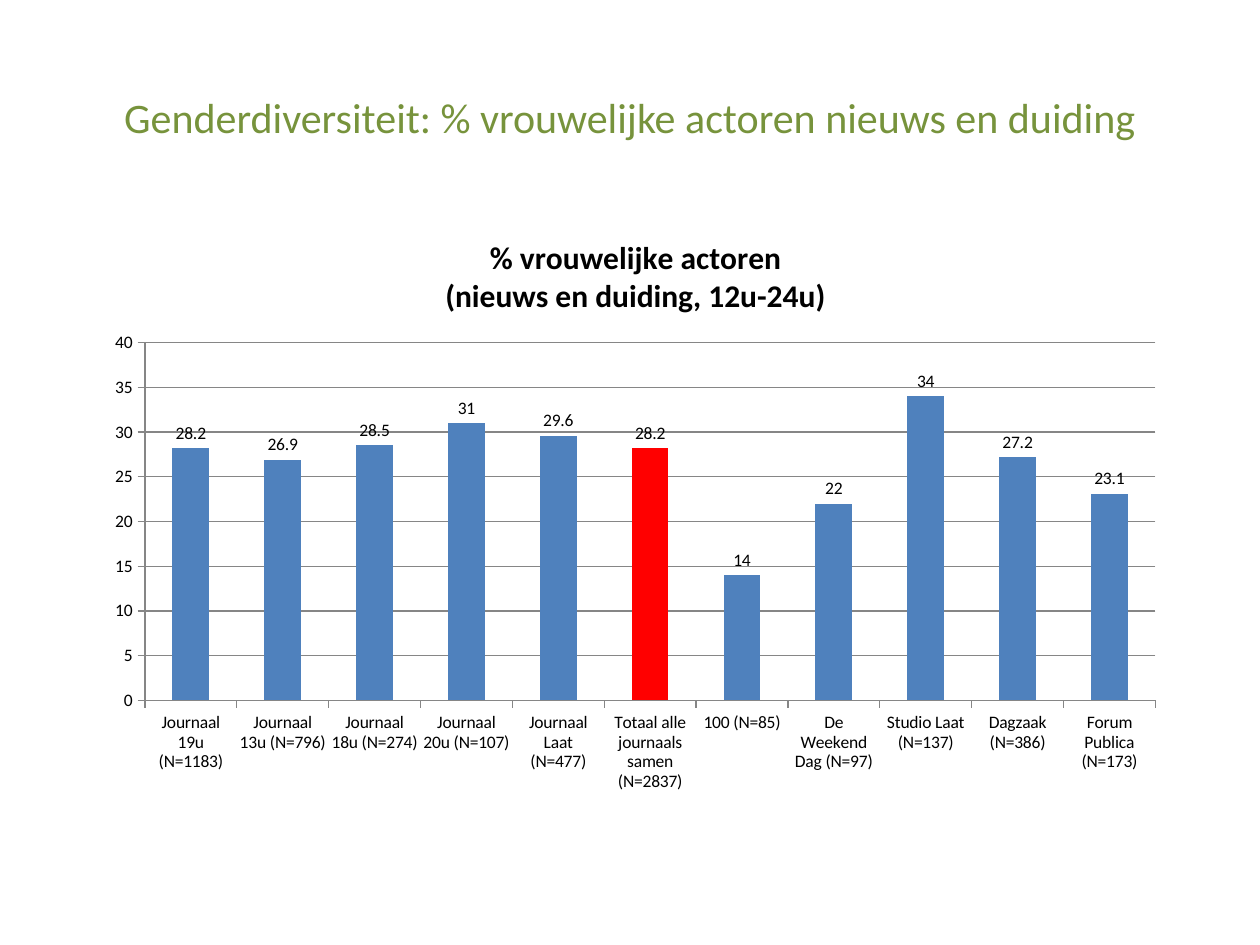
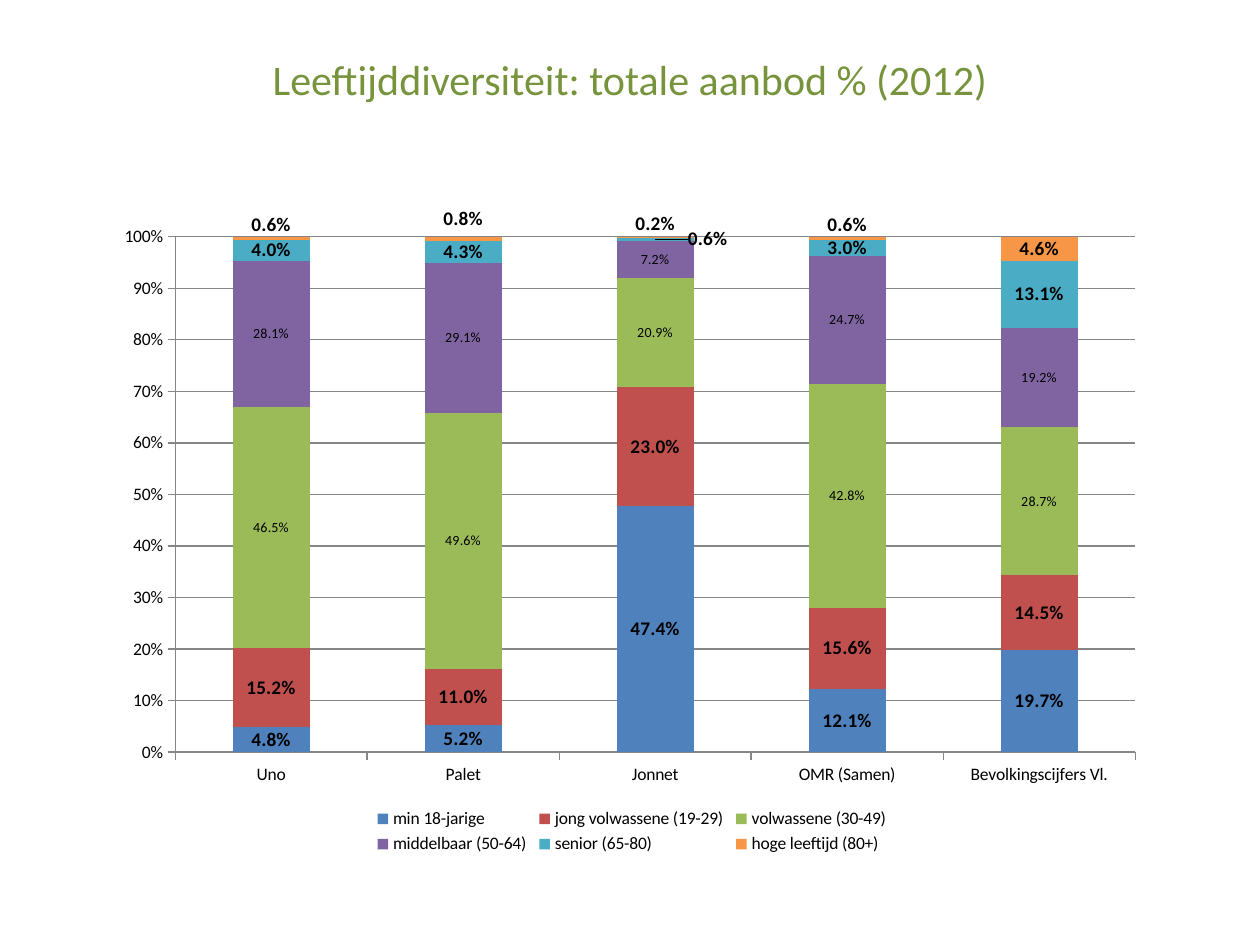
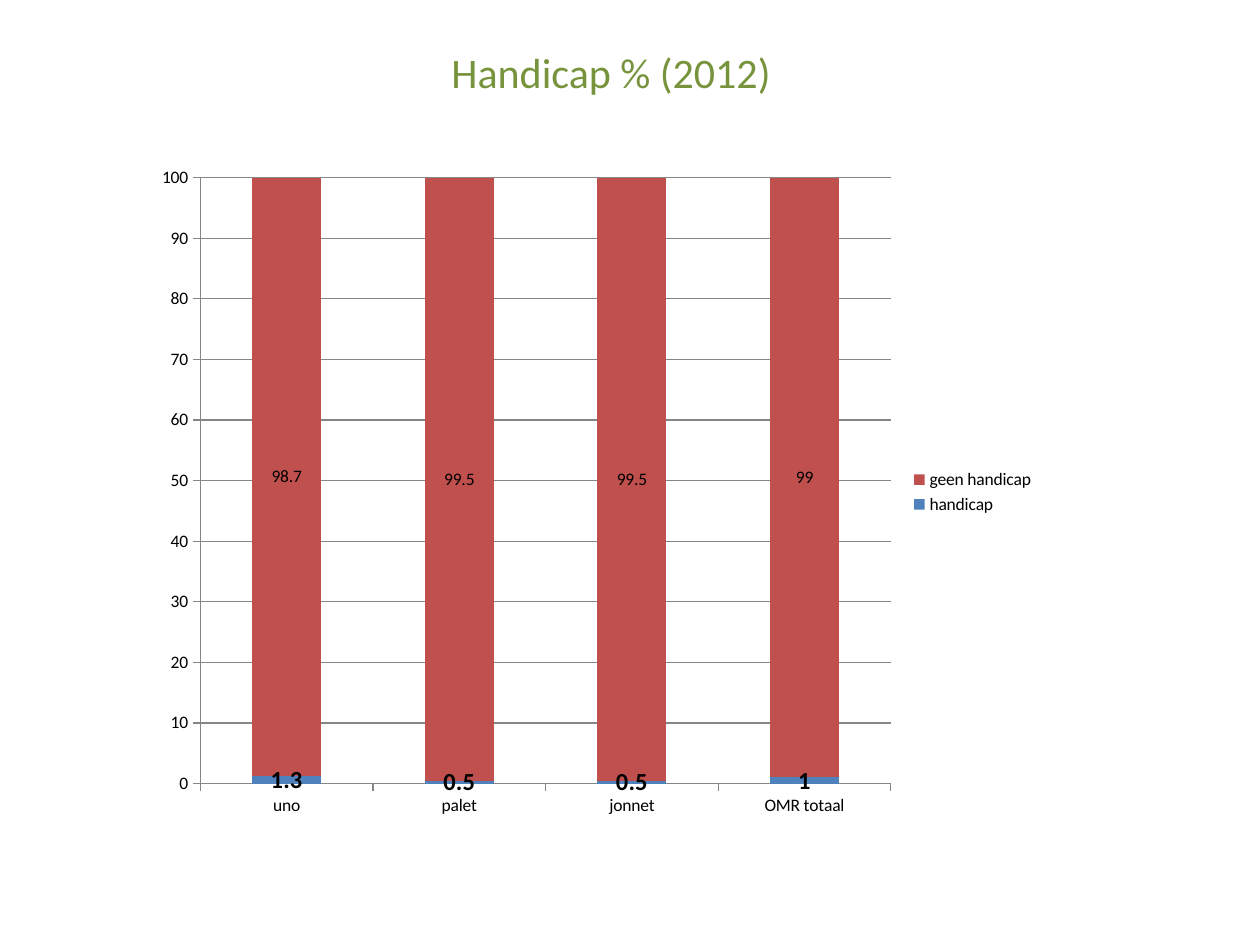
from pptx import Presentation
from pptx.chart.data import CategoryChartData
from pptx.dml.color import RGBColor
from pptx.enum.chart import XL_CHART_TYPE as ChartType
from pptx.enum.chart import XL_LABEL_POSITION as LabelPos
from pptx.enum.chart import XL_LEGEND_POSITION as LegendPos
from pptx.enum.chart import XL_TICK_MARK as TickMark
from pptx.enum.text import MSO_ANCHOR as Anchor
from pptx.enum.text import PP_ALIGN as Align
from pptx.oxml import parse_xml
from pptx.oxml.ns import nsdecls, qn
from pptx.util import Inches, Pt

FONT = "Calibri"
TITLE_GREEN = "77933C"
BLACK = "000000"
GRID_GRAY = "868686"
TOTAL_RED = "FF0000"
SERIES_COLORS = ["4F81BD", "C0504D", "9BBB59", "8064A2", "4BACC6", "F79646"]


def color(hex_value):
    return RGBColor.from_string(hex_value)


def style_font(font, size, bold=False, hex_value=BLACK):
    font.name = FONT
    font.size = Pt(size)
    font.bold = bold
    font.color.rgb = color(hex_value)


def add_title(slide, text, left, top, height):
    sp = slide.shapes.add_textbox(Inches(left), Inches(top), Inches(9), Inches(height))
    tf = sp.text_frame
    tf.word_wrap = True
    tf.vertical_anchor = Anchor.MIDDLE
    p = tf.paragraphs[0]
    p.alignment = Align.CENTER
    r = p.add_run()
    r.text = text
    style_font(r.font, 24, hex_value=TITLE_GREEN)


def manual_layout(modes, **values):
    tags = [f'<c:{tag} val="{val}"/>' for tag, val in modes.items()]
    tags += [f'<c:{tag} val="{val:.4f}"/>' for tag, val in values.items()]
    return parse_xml(f'<c:layout {nsdecls("c")}><c:manualLayout>{"".join(tags)}'
                     '</c:manualLayout></c:layout>')


def box_layout(frame, box, **modes):
    modes.update(xMode="edge", yMode="edge")
    left, top, width, height = box
    return manual_layout(
        modes,
        x=(Inches(left) - frame.left) / frame.width,
        y=(Inches(top) - frame.top) / frame.height,
        w=Inches(width) / frame.width,
        h=Inches(height) / frame.height)


def place_plot(frame, box):
    area = frame.chart.plots[0]._element.getparent()
    for old in area.findall(qn("c:layout")):
        area.remove(old)
    area.insert(0, box_layout(frame, box, layoutTarget="inner"))


def style_axes(chart, maximum, unit, number_format):
    axis = chart.value_axis
    axis.minimum_scale = 0
    axis.maximum_scale = maximum
    axis.major_unit = unit
    axis.has_major_gridlines = True
    axis.tick_labels.number_format = number_format
    axis.tick_labels.number_format_is_linked = False
    for line in (axis.major_gridlines.format.line, axis.format.line,
                 chart.category_axis.format.line):
        line.color.rgb = color(GRID_GRAY)
        line.width = Pt(0.75)
    for each in (axis, chart.category_axis):
        each.major_tick_mark = TickMark.OUTSIDE
        each.minor_tick_mark = TickMark.NONE


def add_column_chart(slide, kind, box, plot_box, cats, series, label_sizes,
                     maximum, unit, axis_format="General", label_format="General"):
    data = CategoryChartData(number_format=label_format)
    data.categories = cats
    for name, vals in series:
        data.add_series(name, vals)
    frame = slide.shapes.add_chart(kind, *map(Inches, box), data)
    chart = frame.chart
    style_font(chart.font, 10)
    chart.has_title = False
    chart.has_legend = False
    style_axes(chart, maximum, unit, axis_format)
    place_plot(frame, plot_box)
    plot = chart.plots[0]
    plot.gap_width = 150
    plot.vary_by_categories = False
    if kind != ChartType.COLUMN_CLUSTERED:
        plot.overlap = 100
    for ser, fill, size in zip(plot.series, SERIES_COLORS, label_sizes):
        ser.format.fill.solid()
        ser.format.fill.fore_color.rgb = color(fill)
        labels = ser.data_labels
        labels.show_value = True
        labels.number_format = label_format
        labels.number_format_is_linked = False
        style_font(labels.font, size, size > 10)
    return frame


def add_legend(chart, position):
    chart.has_legend = True
    chart.legend.position = position
    chart.legend.include_in_layout = False
    style_font(chart.legend.font, 10)


def add_chart_title(chart, lines):
    chart.has_title = True
    chart.chart_title.include_in_layout = False
    tf = chart.chart_title.text_frame
    for i, line in enumerate(lines):
        p = tf.add_paragraph() if i else tf.paragraphs[0]
        r = p.add_run()
        r.text = line
        style_font(r.font, 18, True)


def shift_label(ser, index, dx, dy):
    style_font(ser.points[index].data_label.font, 11, True)
    for idx in ser._element.xpath(f"c:dLbls/c:dLbl/c:idx[@val='{index}']"):
        idx.addnext(manual_layout({}, x=dx, y=dy))


def gender_slide(slide):
    add_title(slide, "Genderdiversiteit: % vrouwelijke actoren nieuws en duiding", 0.5, 0.3, 1.25)
    cats = ["Journaal 19u (N=1183)", "Journaal 13u (N=796)", "Journaal 18u (N=274)",
            "Journaal 20u (N=107)", "Journaal Laat (N=477)",
            "Totaal alle journaals samen (N=2837)", "100 (N=85)",
            "De Weekend Dag (N=97)", "Studio Laat (N=137)", "Dagzaak (N=386)",
            "Forum Publica (N=173)"]
    vals = [28.2, 26.9, 28.5, 31, 29.6, 28.2, 14, 22, 34, 27.2, 23.1]
    chart = add_column_chart(
        slide, ChartType.COLUMN_CLUSTERED, (0.75, 1.7, 8.59, 4.68), (1.15, 2.72, 8.02, 2.84),
        cats, [("% vrouwelijke actoren", vals)], [10], 40, 5).chart
    add_chart_title(chart, ["% vrouwelijke actoren", "(nieuws en duiding, 12u-24u)"])
    ser = chart.plots[0].series[0]
    ser.data_labels.position = LabelPos.OUTSIDE_END
    total_fill = ser.points[5].format.fill
    total_fill.solid()
    total_fill.fore_color.rgb = color(TOTAL_RED)


def age_slide(slide):
    add_title(slide, "Leeftijddiversiteit: totale aanbod % (2012)", 0.5, 0, 1.25)
    cats = ["Uno", "Palet", "Jonnet", "OMR (Samen)", "Bevolkingscijfers Vl."]
    series = [
        ("min 18-jarige", [0.048, 0.052, 0.474, 0.121, 0.197]),
        ("jong volwassene (19-29)", [0.152, 0.11, 0.23, 0.156, 0.145]),
        ("volwassene (30-49)", [0.465, 0.496, 0.209, 0.428, 0.287]),
        ("middelbaar (50-64)", [0.281, 0.291, 0.072, 0.247, 0.192]),
        ("senior (65-80)", [0.04, 0.043, 0.006, 0.03, 0.131]),
        ("hoge leeftijd (80+)", [0.006, 0.008, 0.002, 0.006, 0.046]),
    ]
    frame = add_column_chart(
        slide, ChartType.COLUMN_STACKED_100, (0.83, 1.64, 8.35, 5.18), (1.39, 1.88, 7.62, 4.09),
        cats, series, [11, 11, 8, 8, 11, 11], 1, 0.1, "0%", "0.0%")
    chart = frame.chart
    add_legend(chart, LegendPos.BOTTOM)
    legend_pos = chart.legend._element.find(qn("c:legendPos"))
    for old in chart.legend._element.findall(qn("c:layout")):
        chart.legend._element.remove(old)
    legend_pos.addnext(box_layout(frame, (2.94, 6.38, 4.15, 0.45)))
    senior, oldest = list(chart.plots[0].series)[-2:]
    shift_label(senior, 2, 0.05, 0)
    for index, dy in enumerate([-0.02, -0.03, -0.02, -0.02]):
        shift_label(oldest, index, 0, dy)


def handicap_slide(slide):
    add_title(slide, "Handicap % (2012)", 0.35, 0.19, 0.76)
    series = [("handicap", [1.3, 0.5, 0.5, 1]), ("geen handicap", [98.7, 99.5, 99.5, 99])]
    chart = add_column_chart(
        slide, ChartType.COLUMN_STACKED, (1.14, 1.23, 7.17, 5.35), (1.59, 1.41, 5.48, 4.81),
        ["uno", "palet", "jonnet", "OMR totaal"], series, [14, 10], 100, 10).chart
    add_legend(chart, LegendPos.RIGHT)


def main():
    prs = Presentation()
    prs.slide_width, prs.slide_height = Inches(10), Inches(7.5)
    for build in (gender_slide, age_slide, handicap_slide):
        build(prs.slides.add_slide(prs.slide_layouts[6]))
    prs.save("out.pptx")


if __name__ == "__main__":
    main()
